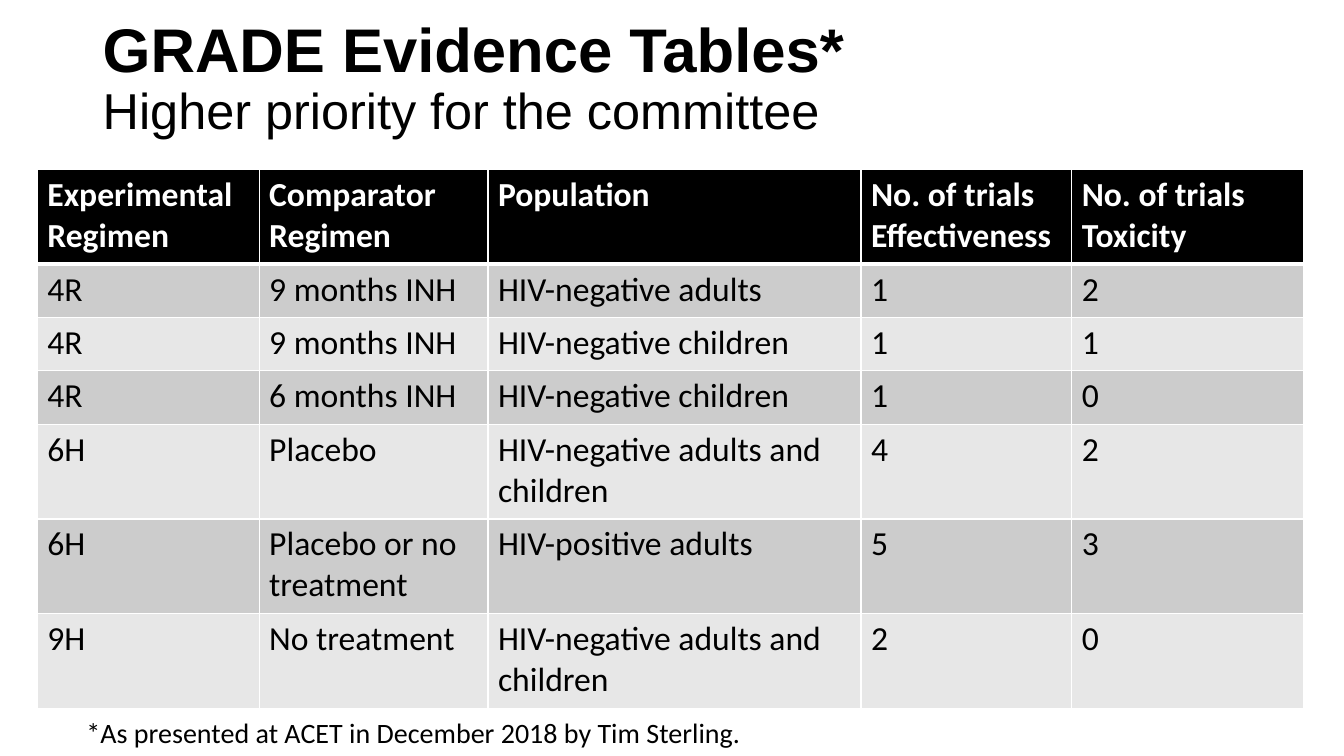
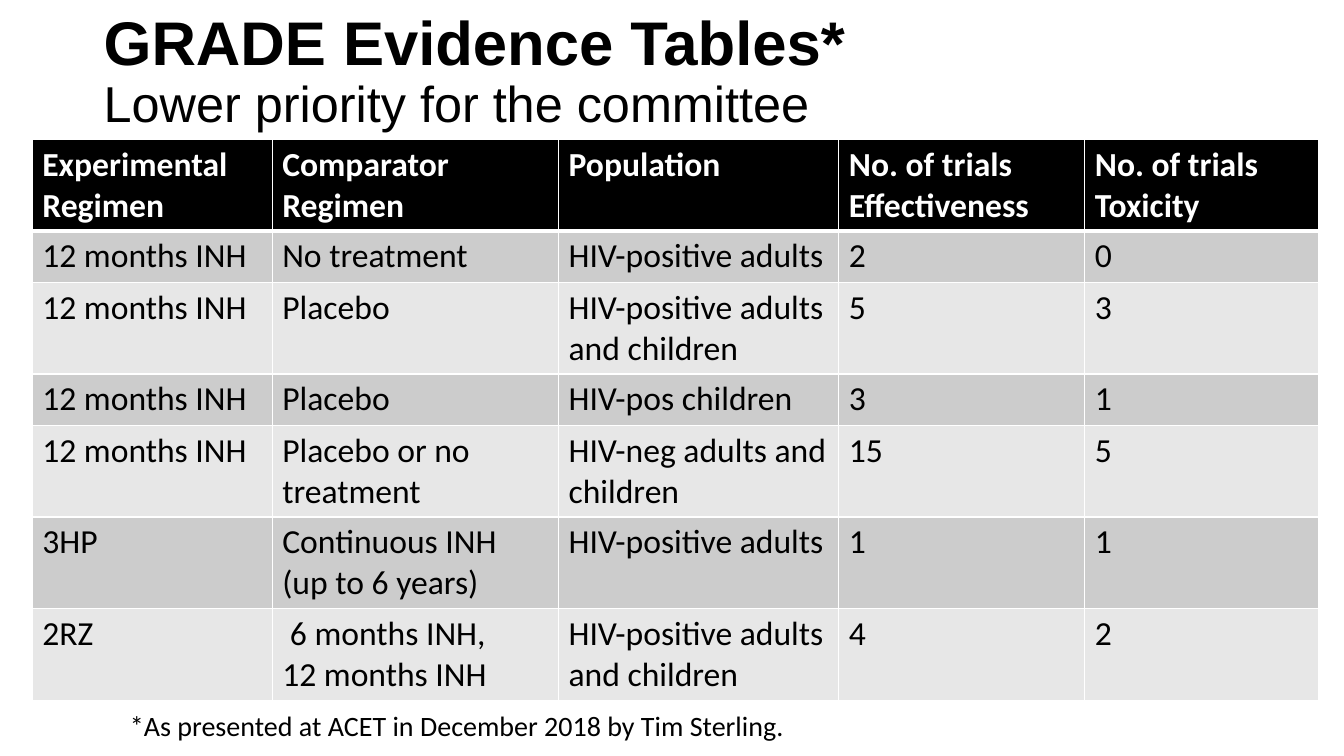
from lxml import etree
from pptx import Presentation, util as u
from pptx.dml.color import RGBColor
from pptx.enum import text as t
from pptx.oxml import ns

HUES = {"ink": "000000", "paper": "FFFFFF", "dark": "CCCCCC", "light": "E7E7E7"}
HEAD = ["Experimental Regimen", "Comparator Regimen", "Population",
        "No. of trials\nEffectiveness", "No. of trials\nToxicity"]
NOTE = "*As presented at ACET in December 2018 by Tim Sterling."
PX = 9144  # 100 px to the inch

PAGES = [
    {
        "sub": "Higher priority for the committee",
        "title": (92, 11, 1150, 137),
        "grid": (37, 168),
        "note": (76, 705),
        "cols": [220, 227, 370, 209, 230],
        "tall": 94, "low": 53,
        "rows": [
            ["4R", "9 months INH", "HIV-negative adults", "1", "2"],
            ["4R", "9 months INH", "HIV-negative children", "1", "1"],
            ["4R", "6 months INH", "HIV-negative children", "1", "0"],
            ["6H", "Placebo", "HIV-negative adults and children", "4", "2"],
            ["6H", "Placebo or no treatment", "HIV-positive adults", "5", "3"],
            ["9H", "No treatment", "HIV-negative adults and children", "2", "0"],
        ],
        "short": {1, 2, 3},
    },
    {
        "sub": "Lower priority for the committee",
        "title": (93, 0, 1150, 145),
        "grid": (32, 138),
        "note": (119, 698),
        "cols": [238, 284, 278, 244, 232],
        "tall": 91, "low": 51,
        "rows": [
            ["12 months INH", "No treatment", "HIV-positive adults", "2", "0"],
            ["12 months INH", "Placebo", "HIV-positive adults and children", "5", "3"],
            ["12 months INH", "Placebo", "HIV-pos children", "3", "1"],
            ["12 months INH", "Placebo or no treatment",
             "HIV-neg adults and children", "15", "5"],
            ["3HP", "Continuous INH\n(up to 6 years)", "HIV-positive adults", "1", "1"],
            ["2RZ", " 6 months INH,\n12 months INH",
             "HIV-positive adults and children", "4", "2"],
        ],
        "short": {1, 3},
    },
]


def put(para, words, size, face="Calibri", hue="ink", bold=False):
    """Add one styled run to a paragraph."""
    run = para.add_run()
    run.text = words
    run.font.size = u.Pt(size)
    run.font.name = face
    run.font.bold = bold
    run.font.color.rgb = RGBColor.from_string(HUES[hue])


def edge(cell, side, width):
    """Draw one white border of a cell, width in points."""
    line = etree.SubElement(cell._tc.get_or_add_tcPr(), ns.qn("a:ln" + side),
                            w=str(u.Pt(width)))
    fill = etree.SubElement(line, ns.qn("a:solidFill"))
    etree.SubElement(fill, ns.qn("a:srgbClr"), val=HUES["paper"])


prs = Presentation()
prs.slide_width, prs.slide_height = 1333 * PX, 750 * PX

for page in PAGES:
    slide = prs.slides.add_slide(prs.slide_layouts[6])

    frame = slide.shapes.add_textbox(*[n * PX for n in page["title"]]).text_frame
    frame.word_wrap = True
    frame.vertical_anchor = t.MSO_ANCHOR.MIDDLE
    para = frame.paragraphs[0]
    para.line_spacing = 0.9
    put(para, "GRADE Evidence Tables*", 44, "Arial", bold=True)
    para.add_line_break()
    put(para, page["sub"], 36, "Arial")

    rows = [HEAD] + page["rows"]
    highs = [page["low" if r in page["short"] else "tall"] for r in range(len(rows))]
    left, top = page["grid"]
    grid = slide.shapes.add_table(
        len(rows), len(HEAD), left * PX, top * PX,
        sum(page["cols"]) * PX, sum(highs) * PX).table
    for col, wide in zip(grid.columns, page["cols"]):
        col.width = wide * PX
    for r, row in enumerate(rows):
        grid.rows[r].height = highs[r] * PX
        back = "ink" if r == 0 else "dark" if r % 2 else "light"
        for c, words in enumerate(row):
            cell = grid.cell(r, c)
            for side in "LRTB":
                thick = (r, side) in [(0, "B"), (1, "T")]
                edge(cell, side, 3 if thick else 1)
            cell.fill.solid()
            cell.fill.fore_color.rgb = RGBColor.from_string(HUES[back])
            for i, part in enumerate(words.split("\n")):
                frame = cell.text_frame
                para = frame.add_paragraph() if i else frame.paragraphs[0]
                put(para, part, 24, hue="ink" if r else "paper", bold=r == 0)

    left, top = page["note"]
    frame = slide.shapes.add_textbox(left * PX, top * PX, 676 * PX, 44 * PX).text_frame
    frame.word_wrap = False
    frame.auto_size = t.MSO_AUTO_SIZE.SHAPE_TO_FIT_TEXT
    put(frame.paragraphs[0], NOTE, 20)

prs.save("out.pptx")
